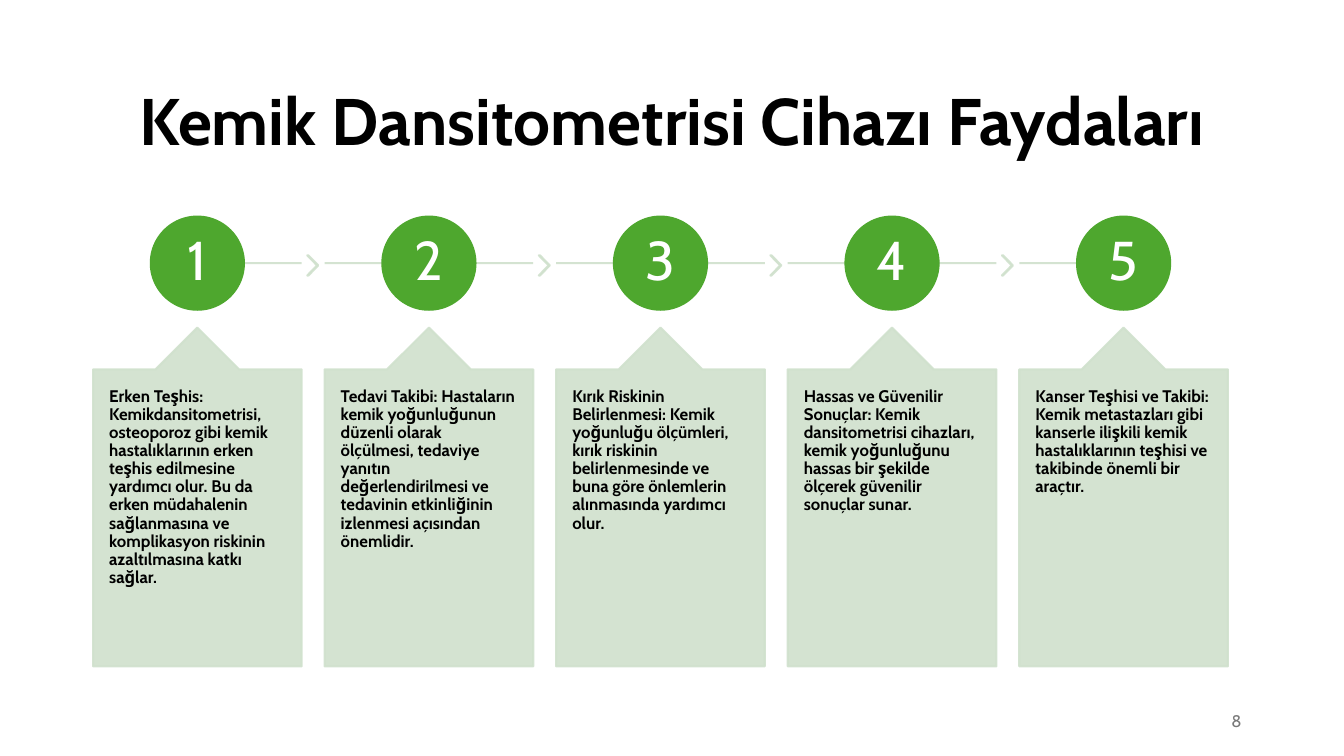
from lxml import etree
from pptx import Presentation
from pptx.dml.color import RGBColor
from pptx.enum.shapes import MSO_CONNECTOR, MSO_SHAPE
from pptx.enum.text import MSO_ANCHOR, PP_ALIGN
from pptx.oxml.ns import qn
from pptx.util import Pt

LINE = MSO_CONNECTOR.STRAIGHT
DISC = MSO_SHAPE.OVAL
CARD = MSO_SHAPE.UP_ARROW_CALLOUT
TIP = MSO_SHAPE.CHEVRON
TOP, MID = MSO_ANCHOR.TOP, MSO_ANCHOR.MIDDLE
LEFT, CENTER, RIGHT = PP_ALIGN.LEFT, PP_ALIGN.CENTER, PP_ALIGN.RIGHT

GREEN, PALE = "4EA72E", "D0E1CD"
BLACK, WHITE, GRAY = "000000", "FFFFFF", "797979"

STEPS = [
    "Erken Teşhis: Kemikdansitometrisi, osteoporoz gibi kemik hastalıklarının erken teşhis edilmesine yardımcı olur. Bu da erken müdahalenin sağlanmasına ve komplikasyon riskinin azaltılmasına katkı sağlar.",
    "Tedavi Takibi: Hastaların kemik yoğunluğunun düzenli olarak ölçülmesi, tedaviye yanıtın değerlendirilmesi ve tedavinin etkinliğinin izlenmesi açısından önemlidir.",
    "Kırık Riskinin Belirlenmesi: Kemik yoğunluğu ölçümleri, kırık riskinin belirlenmesinde ve buna göre önlemlerin alınmasında yardımcı olur.",
    "Hassas ve Güvenilir Sonuçlar: Kemik dansitometrisi cihazları, kemik yoğunluğunu hassas bir şekilde ölçerek güvenilir sonuçlar sunar.",
    "Kanser Teşhisi ve Takibi: Kemik metastazları gibi kanserle ilişkili kemik hastalıklarının teşhisi ve takibinde önemli bir araçtır.",
]


def paint(target, color):
    target.rgb = RGBColor.from_string(color)


class Deck:
    font = "Cabin"
    weight = 1.5

    def __init__(self):
        self.show = Presentation()
        self.show.slide_width = Pt(960)
        self.show.slide_height = Pt(540)
        self.slide = self.show.slides.add_slide(self.show.slide_layouts[5])

    def words(self, shape, text, size, color, align=LEFT, anchor=MID,
              bold=False, pad=(7.2, 3.6), space=0.9):
        frame = shape.text_frame
        frame.text = text
        para = frame.paragraphs[0]
        side, edge = Pt(pad[0]), Pt(pad[1])
        box = {"word_wrap": True, "vertical_anchor": anchor,
               "margin_left": side, "margin_right": side,
               "margin_top": edge, "margin_bottom": edge}
        flow = {"alignment": align, "line_spacing": space}
        face = {"name": self.font, "size": Pt(size), "bold": bold}
        font = para.runs[0].font
        for item, style in ((frame, box), (para, flow), (font, face)):
            for key, value in style.items():
                setattr(item, key, value)
        paint(font.color, color)

    def fade(self, shape, alpha):
        for node in shape._element.spPr.iter(qn("a:srgbClr")):
            etree.SubElement(node, qn("a:alpha")).set("val", str(alpha * 1000))

    def title(self, text, x, y, w, h):
        shape = self.slide.shapes.title
        for key, value in {"left": x, "top": y, "width": w, "height": h}.items():
            setattr(shape, key, Pt(value))
        self.words(shape, text, 47, BLACK, CENTER, bold=True)

    def shape(self, kind, x, y, w, h, color, alpha=100, adjust=()):
        shape = self.slide.shapes.add_shape(kind, Pt(x), Pt(y), Pt(w), Pt(h))
        shape.shadow.inherit = False
        shape.fill.solid()
        paint(shape.fill.fore_color, color)
        paint(shape.line.color, color)
        shape.line.width = Pt(self.weight)
        for index, value in enumerate(adjust):
            shape.adjustments[index] = value
        if alpha < 100:
            self.fade(shape, alpha)
        return shape

    def line(self, start, end, y, color, alpha):
        link = self.slide.shapes.add_connector(
            LINE, Pt(start), Pt(y), Pt(end), Pt(y))
        paint(link.line.color, color)
        link.line.width = Pt(self.weight)
        self.fade(link, alpha)
        etree.SubElement(link._element.spPr, qn("a:effectLst"))

    def label(self, text, x, y, w, h, size, color, align):
        box = self.slide.shapes.add_textbox(Pt(x), Pt(y), Pt(w), Pt(h))
        self.words(box, text, size, color, align, space=1.0)


def main():
    deck = Deck()
    deck.title("Kemik Dansitometrisi Cihazı Faydaları", 66.2, 44, 828, 89.5)
    left, pitch, wide = 66.5, 165.4, 149
    disc, axis = 66.5, 188
    last = len(STEPS) - 1
    for index, text in enumerate(STEPS):
        x = left + index * pitch
        mid = x + wide / 2
        deck.line(x if index else mid, x + wide if index < last else mid,
                  axis, PALE, 90)
        if index < last:
            deck.shape(TIP, x + 153, 182.4, 7.8, 14.4, PALE, 90, (0.9,))
        spot = deck.shape(DISC, mid - disc / 2, axis - disc / 2,
                          disc, disc, GREEN)
        deck.words(spot, str(index + 1), 39, WHITE, CENTER, pad=(2.9, 2.9))
        card = deck.shape(CARD, x, 234, wide, 242, PALE, 90,
                          (0.5, 0.2, 0.2, 1))
        deck.words(card, text, 12, BLACK, anchor=TOP, bold=True,
                   pad=(11.5, 13))
    deck.label("8", 678, 500.5, 216, 28.8, 12, GRAY, RIGHT)
    deck.show.save("out.pptx")


if __name__ == "__main__":
    main()
